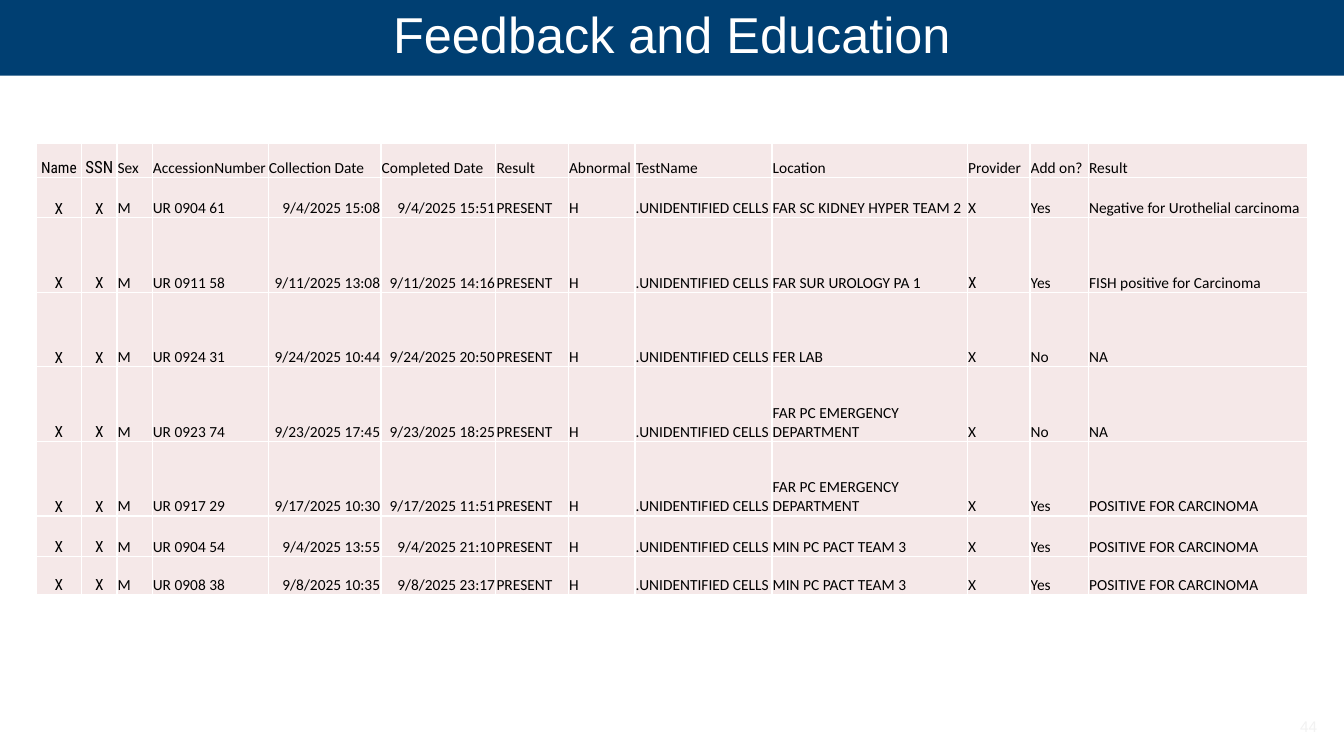
from lxml.etree import SubElement
from pptx import Presentation
from pptx.dml.color import RGBColor
from pptx.enum.text import MSO_ANCHOR, PP_ALIGN
from pptx.oxml.ns import qn
from pptx.util import Pt

NAVY = RGBColor(0x00, 0x3F, 0x72)
ROSE = RGBColor(0xF5, 0xE8, 0xE8)
PALE = RGBColor(0xF2, 0xF2, 0xF2)
WHITE = RGBColor(0xFF, 0xFF, 0xFF)
BLACK = RGBColor(0x00, 0x00, 0x00)

HEADS = ["Name", "SSN", "Sex", "AccessionNumber", "Collection Date",
         "Completed Date", "Result", "Abnormal", "TestName", "Location",
         "Provider", "Add on?", "Result"]
WIDTHS = [32.4, 25.2, 25.2, 82.8, 80.64, 82.08, 51.84, 47.52, 97.92,
          139.68, 44.64, 41.76, 156.24]
HEIGHTS = [24.48, 28.8] + [53.28] * 4 + [28.8, 27.36]

# Accession number, collected, completed, location, add on, result
CASES = [
    ("UR 0904 61", "9/4/2025 15:08", "9/4/2025 15:51",
     "FAR SC KIDNEY HYPER TEAM 2", "Yes", "Negative for Urothelial carcinoma"),
    ("UR 0911 58", "9/11/2025 13:08", "9/11/2025 14:16",
     "FAR SUR UROLOGY PA 1", "Yes", "FISH positive for Carcinoma"),
    ("UR 0924 31", "9/24/2025 10:44", "9/24/2025 20:50",
     "FER LAB", "No", "NA"),
    ("UR 0923 74", "9/23/2025 17:45", "9/23/2025 18:25",
     "FAR PC EMERGENCY DEPARTMENT", "No", "NA"),
    ("UR 0917 29", "9/17/2025 10:30", "9/17/2025 11:51",
     "FAR PC EMERGENCY DEPARTMENT", "Yes", "POSITIVE FOR CARCINOMA"),
    ("UR 0904 54", "9/4/2025 13:55", "9/4/2025 21:10",
     "MIN PC PACT TEAM 3", "Yes", "POSITIVE FOR CARCINOMA"),
    ("UR 0908 38", "9/8/2025 10:35", "9/8/2025 23:17",
     "MIN PC PACT TEAM 3", "Yes", "POSITIVE FOR CARCINOMA"),
]


class Deck:
    head = "Arial"
    body = "Calibri"
    slim = "Roboto Condensed"

    def __init__(self):
        self.show = Presentation()
        self.show.slide_width = Pt(960)
        self.show.slide_height = Pt(540)
        self.slide = self.show.slides.add_slide(self.show.slide_layouts[5])

    def text(self, frame, words, font, size, color, align):
        para = frame.paragraphs[0]
        para.alignment = align
        run = para.add_run()
        run.text = words
        run.font.name = font
        run.font.size = Pt(size)
        run.font.color.rgb = color

    def title(self, words):
        bar = self.slide.shapes.title
        bar.left, bar.top = Pt(0), Pt(-5.76)
        bar.width, bar.height = Pt(960), Pt(59.76)
        bar.fill.solid()
        bar.fill.fore_color.rgb = NAVY
        bar.text_frame.vertical_anchor = MSO_ANCHOR.MIDDLE
        self.text(bar.text_frame, words, self.head, 36, WHITE, PP_ALIGN.CENTER)

    def number(self, words):
        box = self.slide.shapes.add_textbox(Pt(888), Pt(506), Pt(60), Pt(25))
        frame = box.text_frame
        frame.word_wrap = True
        frame.vertical_anchor = MSO_ANCHOR.MIDDLE
        self.text(frame, words, self.head, 11, PALE, PP_ALIGN.RIGHT)

    def edge(self, cell):
        """Give the cell thin white borders, placed ahead of its fill."""
        props = cell._tc.get_or_add_tcPr()
        for side in ("a:lnL", "a:lnR", "a:lnT", "a:lnB"):
            line = SubElement(props, qn(side), w=str(Pt(1)))
            fill = SubElement(line, qn("a:solidFill"))
            SubElement(fill, qn("a:srgbClr"), val=str(WHITE))

    def cell(self, cell, words, font, size, align):
        self.edge(cell)
        cell.fill.solid()
        cell.fill.fore_color.rgb = ROSE
        cell.vertical_anchor = MSO_ANCHOR.BOTTOM
        cell.margin_left = cell.margin_right = cell.margin_top = Pt(0.5)
        cell.margin_bottom = Pt(0)
        self.text(cell.text_frame, words, font, size, BLACK, align)

    def table(self, rows):
        grid = self.slide.shapes.add_table(
            len(rows), len(WIDTHS), Pt(25.92), Pt(102.24),
            Pt(sum(WIDTHS)), Pt(sum(HEIGHTS))).table
        for col, width in zip(grid.columns, WIDTHS):
            col.width = Pt(width)
        for row, height in zip(grid.rows, HEIGHTS):
            row.height = Pt(height)
        for r, row in enumerate(rows):
            for c, words in enumerate(row):
                slim = c < 2 or (r, c) == (2, 10)
                size = 12 if (r, c) == (0, 1) else 11
                align = PP_ALIGN.LEFT
                if c < 2:
                    align = PP_ALIGN.CENTER
                elif r and c in (4, 5):
                    align = PP_ALIGN.RIGHT
                self.cell(grid.cell(r, c), words,
                          self.slim if slim else self.body, size, align)


def main():
    deck = Deck()
    deck.title("Feedback and Education")
    rows = [["X", "X", "M", code, start, end, "PRESENT", "H",
             ".UNIDENTIFIED CELLS", place, "X", added, result]
            for code, start, end, place, added, result in CASES]
    deck.table([HEADS] + rows)
    deck.number("44")
    deck.show.save("out.pptx")


if __name__ == "__main__":
    main()
